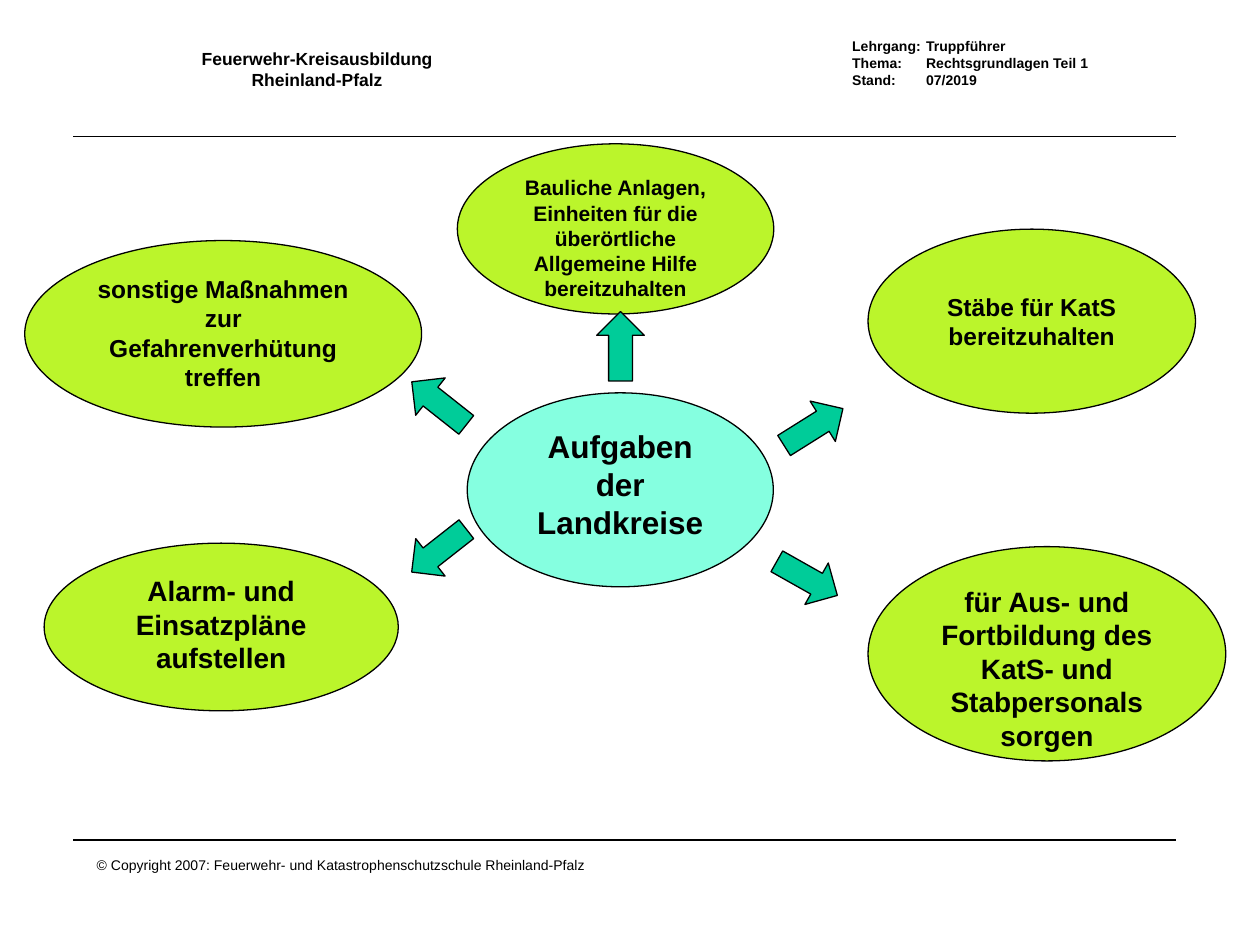
from lxml.etree import SubElement
from pptx import Presentation
from pptx.dml.color import RGBColor
from pptx.enum.shapes import MSO_CONNECTOR as Link, MSO_SHAPE as Preset
from pptx.enum.text import MSO_ANCHOR as Anchor, PP_ALIGN as Align
from pptx.oxml.ns import qn
from pptx.util import Cm, Pt

BLACK, AQUA, LIME, GREEN = "000000", "85FFE0", "BBF52B", "00CC99"
ARROW_WIDTH, ARROW_HEIGHT = 1.4, 0.96


def color(value):
    """Turn a hex string into a colour."""
    return RGBColor.from_string(value)


def write(frame, text, size=8, bold=True, align=Align.LEFT, tab=None):
    """Fill a text frame with one paragraph per line of text."""
    frame.text = text
    for paragraph in frame.paragraphs:
        paragraph.alignment = align
        if tab:
            stops = SubElement(paragraph._p.get_or_add_pPr(), qn("a:tabLst"))
            SubElement(stops, qn("a:tab"), pos=str(Cm(tab)), algn="l")
        for run in paragraph.runs:
            run.font.name = "Arial"
            run.font.size = Pt(size)
            run.font.bold = bold
            run.font.color.rgb = color(BLACK)


def add_label(slide, box, text, **style):
    """Add a text box that does not wrap."""
    label = slide.shapes.add_textbox(*map(Cm, box))
    label.text_frame.word_wrap = False
    write(label.text_frame, text, **style)


def add_rule(slide, y):
    """Add a horizontal rule across the slide."""
    rule = slide.shapes.add_connector(Link.STRAIGHT, Cm(1.48), Cm(y), Cm(23.7), Cm(y))
    rule.line.color.rgb = color(BLACK)
    rule.line.width = Pt(1)
    SubElement(rule._element.spPr, qn("a:effectLst"))


def add_outlined(slide, preset, box, fill):
    """Add a filled preset shape with a thin black outline."""
    shape = slide.shapes.add_shape(preset, *map(Cm, box))
    shape.shadow.inherit = False
    shape.fill.solid()
    shape.fill.fore_color.rgb = color(fill)
    shape.line.color.rgb = color(BLACK)
    shape.line.width = Pt(0.75)
    return shape


def add_bubble(slide, box, text, size, fill=LIME, anchor=Anchor.TOP):
    """Add an ellipse with centred text."""
    bubble = add_outlined(slide, Preset.OVAL, box, fill)
    bubble.text_frame.word_wrap = True
    bubble.text_frame.vertical_anchor = anchor
    write(bubble.text_frame, text, size=size, align=Align.CENTER)


def add_arrow(slide, left, top, angle):
    """Add a block arrow turned by an angle."""
    box = (left, top, ARROW_WIDTH, ARROW_HEIGHT)
    arrow = add_outlined(slide, Preset.RIGHT_ARROW, box, GREEN)
    arrow.rotation = angle


def main():
    """Build the slide and save it."""
    deck = Presentation()
    deck.slide_width, deck.slide_height = Cm(25.4), Cm(19.05)
    slide = deck.slides.add_slide(deck.slide_layouts[6])

    add_label(slide, (3.81, 0.84, 5.16, 1.09),
              "Feuerwehr-Kreisausbildung\nRheinland-Pfalz", size=10, align=Align.CENTER)
    add_label(slide, (16.93, 0.64, 5.33, 1.7),
              "Lehrgang:\tTruppführer\nThema:\tRechtsgrundlagen Teil 1\nStand:\t07/2019",
              tab=1.49)
    for y in (2.75, 16.93):
        add_rule(slide, y)
    add_label(slide, (1.7, 17.15, 10.39, 0.58),
              "© Copyright 2007: Feuerwehr- und Katastrophenschutzschule Rheinland-Pfalz",
              bold=False)

    add_bubble(slide, (9.42, 7.92, 6.17, 3.91), "Aufgaben der Landkreise", 18, fill=AQUA)
    add_bubble(slide, (17.5, 4.62, 6.6, 3.71), "Stäbe für KatS bereitzuhalten", 14,
               anchor=Anchor.MIDDLE)
    tasks = [
        ((0.89, 10.95, 7.14, 3.38), "Alarm- und Einsatzpläne aufstellen", 16),
        ((17.5, 11.02, 7.21, 4.32),
         "für Aus- und Fortbildung des KatS- und Stabpersonals sorgen", 16),
        ((0.5, 4.85, 8, 3.76), "sonstige Maßnahmen zur Gefahrenverhütung treffen", 14),
        ((9.22, 2.9, 6.38, 3.43),
         "Bauliche Anlagen, Einheiten für die überörtliche Allgemeine Hilfe bereitzuhalten",
         12),
    ]
    for box, text, size in tasks:
        add_bubble(slide, box, text, size)

    arrows = [(15.7, 8.13, 327.9), (15.57, 11.18, 29.4), (8.15, 10.62, 141.9),
              (8.15, 7.65, 218.3), (11.81, 6.5, 270)]
    for left, top, angle in arrows:
        add_arrow(slide, left, top, angle)
    deck.save("out.pptx")


if __name__ == "__main__":
    main()
